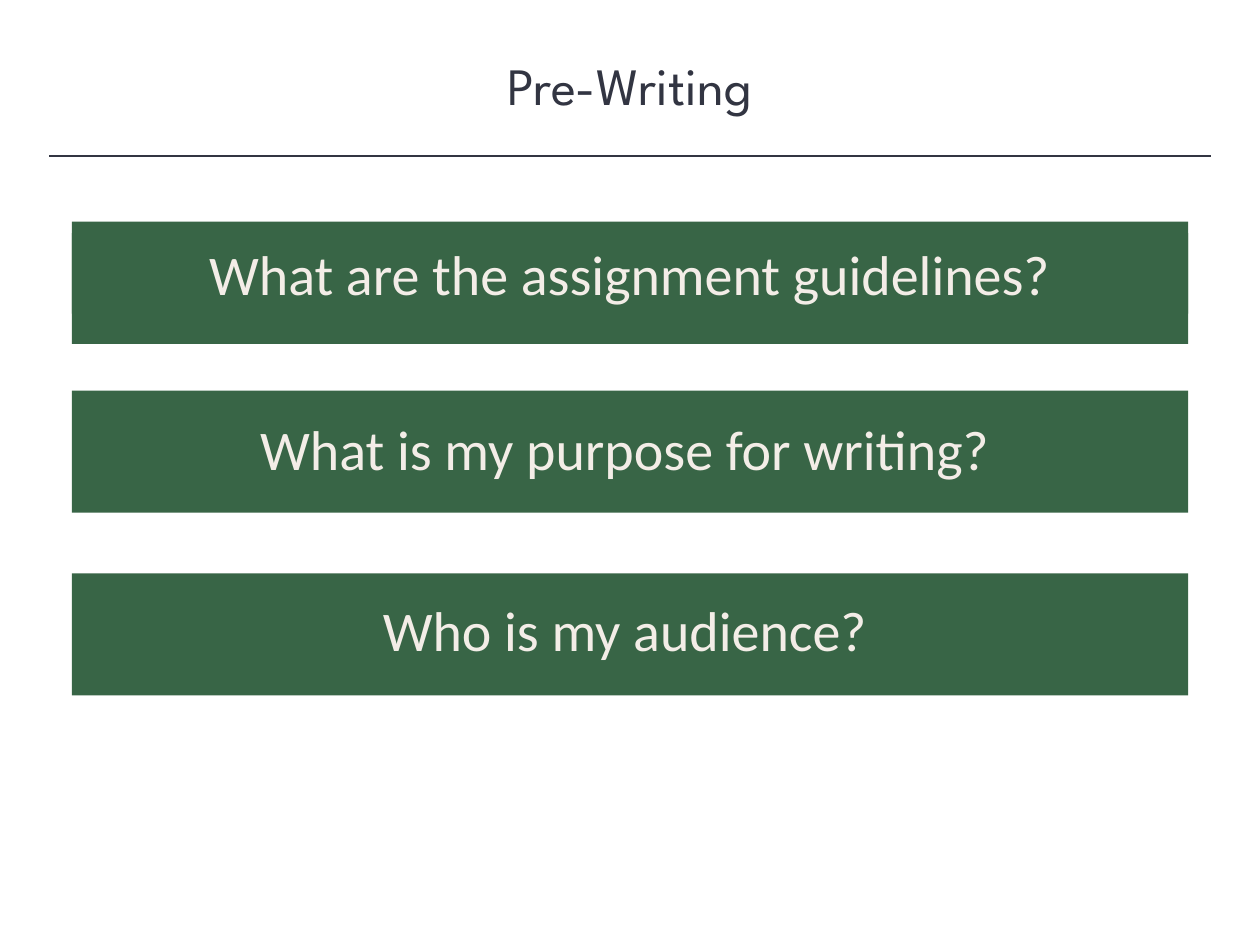
import pptx
import pptx.util
import pptx.dml.color
import pptx.enum.shapes
import pptx.enum.text
import pptx.oxml

Inches = pptx.util.Inches

# Content: question, bar top, label left, label top, label width
TITLE = "Pre-Writing"
BARS = [
    ("What are the assignment guidelines?", 1.76, 0.57, 1.85, 8.86),
    ("What is my purpose for writing?", 3.1, 0.67, 3.24, 8.58),
    ("Who is my audience?", 4.55, 0.67, 4.68, 8.58),
]
DARK, GREEN, CREAM = "323542", "386546", "F3EDE7"
WIDE, HIGH = 10, 7.5
EDGE, RULE = 0.39, 1.24


def paint(form, color):
    form.solid()
    form.fore_color.rgb = pptx.dml.color.RGBColor.from_string(color)


def write(shape, text, font, size, color):
    frame = shape.text_frame
    frame.word_wrap = True
    frame.auto_size = pptx.enum.text.MSO_AUTO_SIZE.NONE
    frame.vertical_anchor = pptx.enum.text.MSO_ANCHOR.TOP
    line = frame.paragraphs[0]
    line.alignment = pptx.enum.text.PP_ALIGN.CENTER
    run = line.add_run()
    run.text = text
    run.font.name = font
    run.font.size = pptx.util.Pt(size)
    paint(run.font.fill, color)


def block(shapes, *place):
    rect = shapes.add_shape(
        pptx.enum.shapes.MSO_SHAPE.RECTANGLE, *map(Inches, place))
    rect.shadow.inherit = False
    paint(rect.fill, GREEN)
    rect.line.fill.background()
    return rect


def main():
    deck = pptx.Presentation()
    deck.slide_width, deck.slide_height = Inches(WIDE), Inches(HIGH)
    slide = deck.slides.add_slide(deck.slide_layouts[5])
    shapes = slide.shapes
    paint(slide.background.fill, "FFFFFF")

    # Title
    title = shapes.title
    title.left, title.top = Inches(0), Inches(0.37)
    title.width, title.height = Inches(WIDE), Inches(0.61)
    write(title, TITLE, "League Spartan", 30, DARK)

    # Rule under the title
    rule = shapes.add_connector(
        pptx.enum.shapes.MSO_CONNECTOR.STRAIGHT,
        Inches(EDGE), Inches(RULE), Inches(WIDE - EDGE), Inches(RULE))
    rule.line.width = pptx.util.Pt(1)
    paint(rule.line.fill, DARK)
    rule._element.spPr.append(
        pptx.oxml.parse_xml(
            '<a:effectLst xmlns:a="http://schemas.openxmlformats.org'
            '/drawingml/2006/main"/>'))

    # Question bars with their labels
    for text, top, left, y, width in BARS:
        block(shapes, 0.57, top, 8.86, 0.97)
        label = block(shapes, left, y, width, 0.64)
        write(label, text, "Calibri", 32, CREAM)

    deck.save("out.pptx")


if __name__ == "__main__":
    main()
